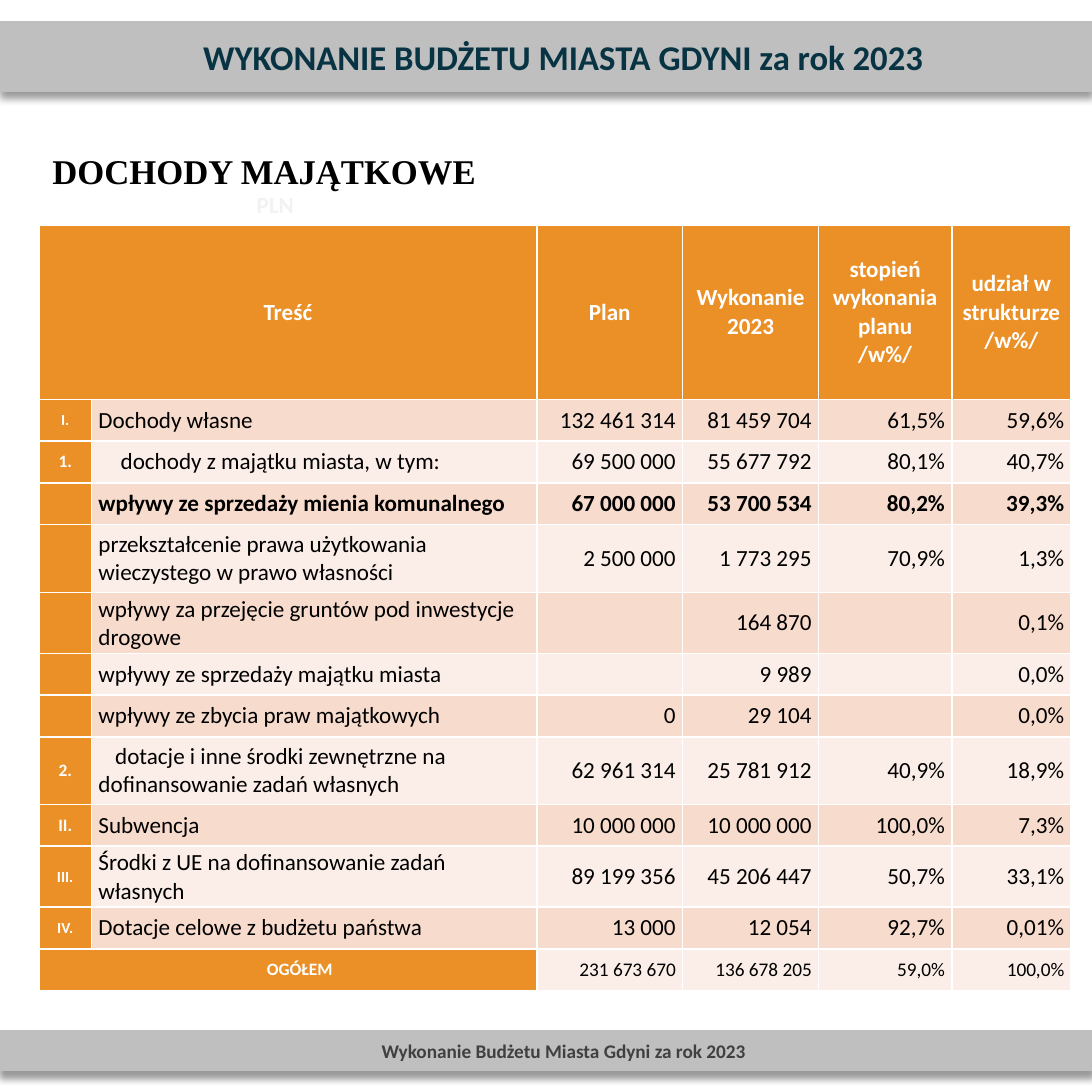
from lxml import etree
from pptx import Presentation
from pptx.dml.color import RGBColor
from pptx.enum.shapes import MSO_SHAPE
from pptx.enum.text import MSO_ANCHOR, PP_ALIGN
from pptx.oxml.ns import qn
from pptx.util import Inches, Pt

GREY = RGBColor(0xBF, 0xBF, 0xBF)
DARK_GREY = RGBColor(0x40, 0x40, 0x40)
NAVY = RGBColor(0x08, 0x33, 0x43)
ORANGE = RGBColor(0xEA, 0x90, 0x27)
PEACH = RGBColor(0xF7, 0xDB, 0xCD)
CREAM = RGBColor(0xFB, 0xEE, 0xE8)
PALE = RGBColor(0xF2, 0xF2, 0xF2)
WHITE = RGBColor(0xFF, 0xFF, 0xFF)
BLACK = RGBColor(0, 0, 0)

SIDE = 7.87
COL_WIDTHS = [0.38, 3.21, 1.05, 0.98, 0.96, 0.86]
HEADER_HEIGHT = 1.26
ROW_HEIGHT = 0.3
TALL_ROWS = {4: 0.49, 5: 0.44, 8: 0.49, 10: 0.44}
INDENTS = {2: 0.16, 8: 0.12}
NUMERAL_SIZES = {"1.": 9, "2.": 9, "II.": 9}

HEADER = ["Treść", "", "Plan", "Wykonanie 2023",
          "stopień wykonania planu\v/w%/", "udział w strukturze /w%/"]
INCOME = [
    ["I.", "Dochody własne", "132 461 314", "81 459 704", "61,5%", "59,6%"],
    ["1.", "dochody z majątku miasta, w tym:", "69 500 000", "55 677 792", "80,1%", "40,7%"],
    ["", "wpływy ze sprzedaży mienia komunalnego", "67 000 000", "53 700 534", "80,2%", "39,3%"],
    ["", "przekształcenie prawa użytkowania wieczystego w prawo własności",
     "2 500 000", "1 773 295", "70,9%", "1,3%"],
    ["", "wpływy za przejęcie gruntów pod inwestycje drogowe", "", "164 870", "", "0,1%"],
    ["", "wpływy ze sprzedaży majątku miasta", "", "9 989", "", "0,0%"],
    ["", "wpływy ze zbycia praw majątkowych", "0", "29 104", "", "0,0%"],
    ["2.", "dotacje i inne środki zewnętrzne na dofinansowanie zadań własnych",
     "62 961 314", "25 781 912", "40,9%", "18,9%"],
    ["II.", "Subwencja", "10 000 000", "10 000 000", "100,0%", "7,3%"],
    ["III.", "Środki z UE na dofinansowanie zadań własnych",
     "89 199 356", "45 206 447", "50,7%", "33,1%"],
    ["IV.", "Dotacje celowe z budżetu państwa", "13 000", "12 054", "92,7%", "0,01%"],
]
TOTAL = ["OGÓŁEM", "", "231 673 670", "136 678 205", "59,0%", "100,0%"]
BOLD_ROW = 3


def style_text(p, size, color, bold=True, align=PP_ALIGN.CENTER, name="Calibri"):
    p.alignment = align
    p.font.name = name
    p.font.size = Pt(size)
    p.font.bold = bold
    p.font.color.rgb = color


def add_band(slide, top, height, text, size, color):
    sp = slide.shapes.add_shape(MSO_SHAPE.RECTANGLE, 0, Inches(top), Inches(SIDE), Inches(height))
    sp.fill.solid()
    sp.fill.fore_color.rgb = GREY
    sp.line.color.rgb = GREY
    sp.line.width = Pt(1)
    sp.shadow.inherit = False
    effects = sp._element.spPr.find(qn("a:effectLst"))
    shadow = etree.SubElement(effects, qn("a:outerShdw"), blurRad=str(Pt(4)), dist=str(Pt(3)),
                              dir="5400000", rotWithShape="0")
    black = etree.SubElement(shadow, qn("a:srgbClr"), val="000000")
    etree.SubElement(black, qn("a:alpha"), val="40000")
    tf = sp.text_frame
    tf.margin_left = Inches(0.35)
    tf.vertical_anchor = MSO_ANCHOR.MIDDLE
    tf.text = text
    style_text(tf.paragraphs[0], size, color)


def add_heading(slide, left, top, width, height):
    tf = slide.shapes.add_textbox(
        Inches(left), Inches(top), Inches(width), Inches(height)).text_frame
    tf.word_wrap = True
    tf.text = "DOCHODY MAJĄTKOWE"
    style_text(tf.paragraphs[0], 18, BLACK, align=PP_ALIGN.LEFT, name="Times New Roman")


def add_currency(slide, left, top, width, height):
    sp = slide.shapes.add_shape(
        MSO_SHAPE.OVAL, Inches(left), Inches(top), Inches(width), Inches(height))
    sp.fill.background()
    sp.line.fill.background()
    sp.shadow.inherit = False
    tf = sp.text_frame
    tf.word_wrap = False
    tf.vertical_anchor = MSO_ANCHOR.MIDDLE
    tf.text = "PLN"
    style_text(tf.paragraphs[0], 12, PALE)


def fill_cell(cell, text, fill, size, color, bold, align):
    cell.fill.solid()
    cell.fill.fore_color.rgb = fill
    cell.vertical_anchor = MSO_ANCHOR.MIDDLE
    cell.margin_left = cell.margin_right = Inches(0.05)
    cell.margin_top = cell.margin_bottom = Inches(0.02)
    cell.text = text
    style_text(cell.text_frame.paragraphs[0], size, color, bold, align)


def add_income_table(slide, left, top):
    rows = [HEADER, *INCOME, TOTAL]
    last = len(rows) - 1
    heights = [HEADER_HEIGHT] + [TALL_ROWS.get(i, ROW_HEIGHT) for i in range(1, len(rows))]
    table = slide.shapes.add_table(
        len(rows), len(COL_WIDTHS), Inches(left), Inches(top),
        Inches(sum(COL_WIDTHS)), Inches(sum(heights))).table
    table.horz_banding = False
    for column, width in zip(table.columns, COL_WIDTHS):
        column.width = Inches(width)
    for row, height in zip(table.rows, heights):
        row.height = Inches(height)
    for i in (0, last):
        table.cell(i, 0).merge(table.cell(i, 1))

    for i, row in enumerate(rows):
        band = PEACH if i % 2 else CREAM
        for j, text in enumerate(row):
            cell = table.cell(i, j)
            if i == 0:
                fill_cell(cell, text, ORANGE, 12, WHITE, True, PP_ALIGN.CENTER)
            elif j == 0:
                size = 9 if i == last else NUMERAL_SIZES.get(text, 8)
                fill_cell(cell, text, ORANGE, size, WHITE, True, PP_ALIGN.CENTER)
            else:
                align = PP_ALIGN.LEFT if j == 1 else PP_ALIGN.RIGHT
                size = 10 if i == last else 12
                fill_cell(cell, text, band, size, BLACK, i == BOLD_ROW, align)
    for i, indent in INDENTS.items():
        pPr = table.cell(i, 1).text_frame.paragraphs[0]._p.get_or_add_pPr()
        pPr.set("indent", str(Inches(indent)))
    table.cell(last, 0).margin_left = Inches(0.22)


def main():
    prs = Presentation()
    prs.slide_width = prs.slide_height = Inches(SIDE)
    slide = prs.slides.add_slide(prs.slide_layouts[6])
    add_band(slide, 7.43, 0.28, "Wykonanie Budżetu Miasta Gdyni za rok 2023", 10, DARK_GREY)
    add_band(slide, 0.16, 0.5, "WYKONANIE BUDŻETU MIASTA GDYNI za rok 2023", 18, NAVY)
    add_currency(slide, 1.73, 1.22, 0.51, 0.5)
    add_heading(slide, 0.28, 1.03, 7.04, 0.4)
    add_income_table(slide, 0.28, 1.62)
    prs.save("out.pptx")


if __name__ == "__main__":
    main()
